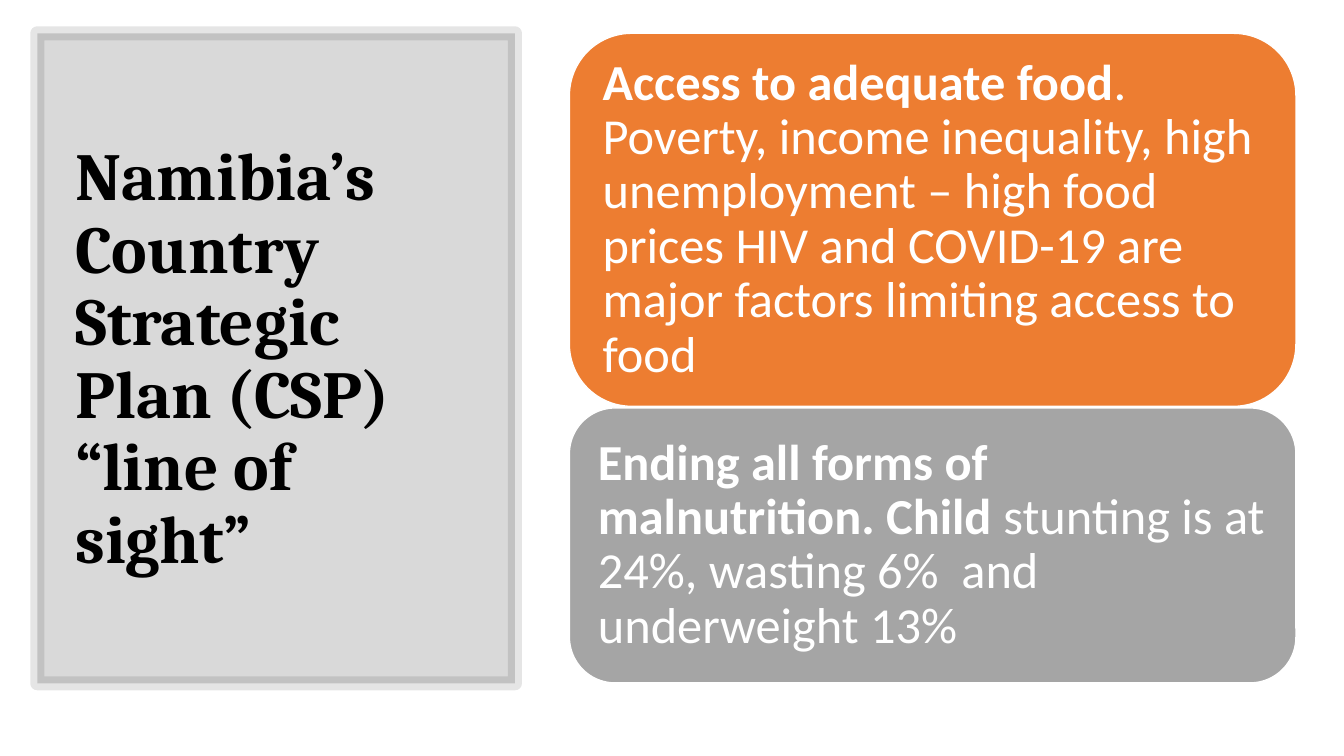
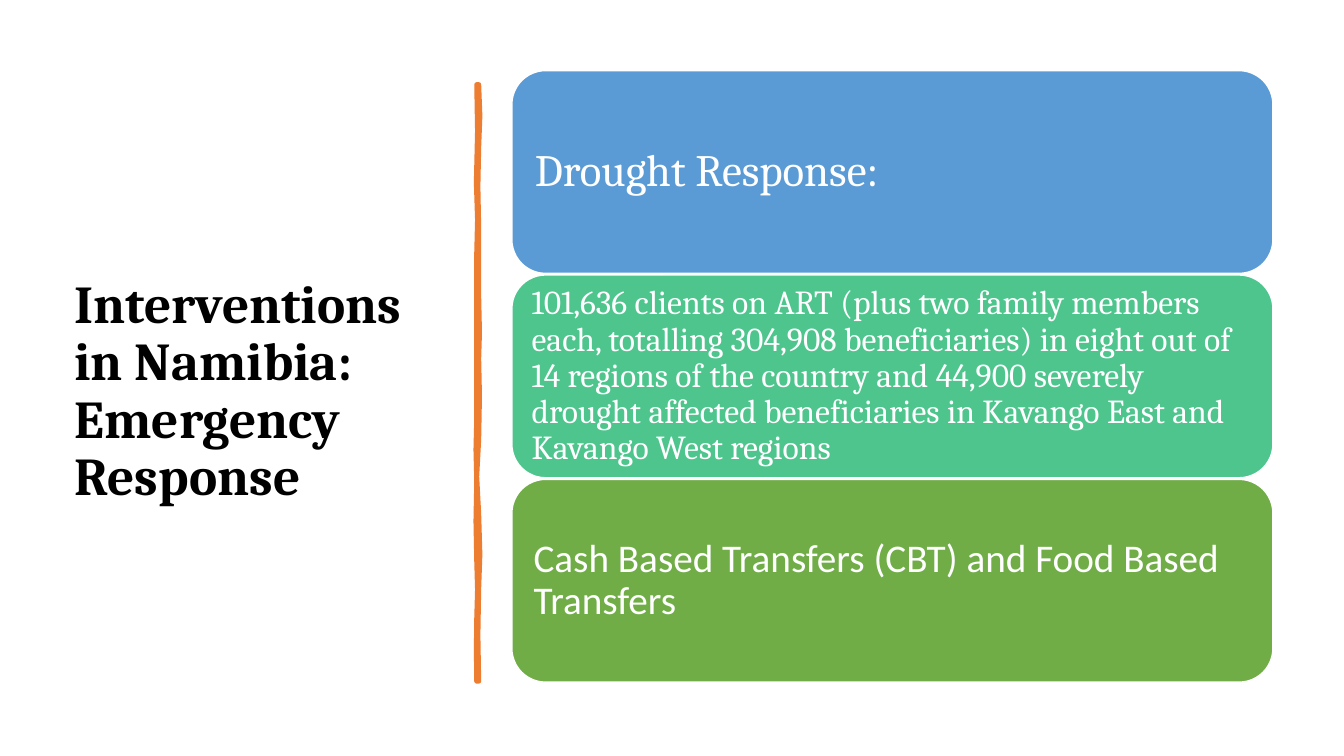
"""Build two slides on Namibia's strategic plan and emergency response."""
from lxml.etree import SubElement
from pptx import Presentation
from pptx.dml.color import RGBColor
from pptx.enum.shapes import MSO_SHAPE
from pptx.enum.text import MSO_ANCHOR, PP_ALIGN
from pptx.oxml.ns import qn
from pptx.util import Cm, Pt

BLACK, WHITE = "000000", "FFFFFF"
ORANGE, GREY, BLUE, TEAL, GREEN = "ED7D31", "A5A5A5", "5B9BD5", "4DC58D", "70AD47"
HEADING_FONT, BODY_FONT = "Cambria", "Calibri"
LINE_SPACING = 0.9
CARD_GAP = 0.04

DIVIDER_RIGHT = [
    (12.07, 2.13), (12.1, 2.92), (12.07, 3.71), (12.05, 4.7), (12.07, 5.74),
    (12.07, 7.47), (12.09, 8.38), (12.07, 9.04), (12.09, 9.98), (12.07, 11.07),
    (12.02, 12.01), (12.07, 12.95), (12.1, 13.97), (12.07, 14.83),
    (12.05, 16), (12.07, 17.17),
]
DIVIDER_LEFT = [
    (12.01, 17.17), (12, 16.38), (12.01, 15.57), (12.03, 14.86), (12.01, 14.15),
    (11.99, 13.13), (12.01, 12.12), (11.99, 11.33), (12.01, 10.54),
    (12.01, 8.51), (12.01, 6.35), (12.03, 5.54), (12, 4.6), (12.03, 3.3),
    (12.01, 2.13),
]


def color(hex_code):
    """Turn a hex string into a colour."""
    return RGBColor.from_string(hex_code)


def paint(shape, fill, line, line_width):
    """Give a shape its fill and outline, without a shadow."""
    shape.shadow.inherit = False
    shape.fill.solid()
    shape.fill.fore_color.rgb = color(fill)
    shape.line.color.rgb = color(line)
    shape.line.width = Pt(line_width)


def set_opacity(solid_fill, percent):
    """Make a solid fill partly transparent."""
    alpha = SubElement(solid_fill.find(qn("a:srgbClr")), qn("a:alpha"))
    alpha.set("val", str(percent * 1000))


def write(frame, runs, font, size, ink, bold=False):
    """Write one left-aligned paragraph from (text, emphasised) runs."""
    frame.word_wrap = True
    frame.vertical_anchor = MSO_ANCHOR.MIDDLE
    paragraph = frame.paragraphs[0]
    paragraph.alignment = PP_ALIGN.LEFT
    paragraph.line_spacing = LINE_SPACING
    paragraph.font.name = font
    paragraph.font.size = Pt(size)
    paragraph.font.bold = bold
    paragraph.font.color.rgb = color(ink)
    for text, emphasised in runs:
        run = paragraph.add_run()
        run.text = text
        if emphasised:
            run.font.bold = True


def add_title(slide, text, left, top, width, height, size):
    """Add the bold title at the left of a slide."""
    title = slide.shapes.add_textbox(Cm(left), Cm(top), Cm(width), Cm(height))
    write(title.text_frame, [(text, False)], HEADING_FONT, size, BLACK, bold=True)


def add_title_panel(slide, left, top, width, height):
    """Add the translucent panel behind a title."""
    panel = slide.shapes.add_shape(
        MSO_SHAPE.RECTANGLE, Cm(left), Cm(top), Cm(width), Cm(height))
    paint(panel, BLACK, BLACK, 10)
    properties = panel.element.spPr
    set_opacity(properties.find(qn("a:solidFill")), 15)
    set_opacity(properties.find(qn("a:ln")).find(qn("a:solidFill")), 10)


def add_divider(slide):
    """Add the hand-drawn vertical divider."""
    start, *rest = [(Cm(x), Cm(y)) for x, y in DIVIDER_RIGHT + DIVIDER_LEFT]
    outline = slide.shapes.build_freeform(*start)
    outline.add_line_segments(rest, close=True)
    divider = outline.convert_to_shape()
    paint(divider, ORANGE, ORANGE, 3.25)
    SubElement(divider.element.spPr.find(qn("a:ln")), qn("a:round"))


def add_cards(slide, left, top, width, cards):
    """Stack rounded cards of (height, fill, font, size, margin, runs)."""
    for height, fill, font, size, margin, runs in cards:
        card = slide.shapes.add_shape(
            MSO_SHAPE.ROUNDED_RECTANGLE, Cm(left), Cm(top), Cm(width), Cm(height))
        paint(card, fill, WHITE, 1)
        frame = card.text_frame
        frame.margin_left = frame.margin_right = Cm(margin)
        frame.margin_top = frame.margin_bottom = Cm(margin)
        write(frame, runs, font, size, WHITE)
        top += height + CARD_GAP


def build_strategy(slide):
    """Build the strategic plan slide."""
    add_title_panel(slide, 0.94, 0.84, 12.04, 16.38)
    add_title(slide, "Namibia’s Country Strategic Plan (CSP) “line of sight”",
              1.65, 1.78, 10.57, 14.6, 48)
    access = [
        ("Access to adequate food", True),
        (". Poverty, income inequality, high unemployment – high food prices "
         "HIV and COVID-19 are major factors limiting access to food", False),
    ]
    malnutrition = [
        ("Ending all forms of malnutrition. Child", True),
        (" stunting is at 24%, wasting 6%  and underweight 13%", False),
    ]
    add_cards(slide, 14.35, 0.84, 18.31, [
        (9.4, ORANGE, BODY_FONT, 36, 0.38, access),
        (6.93, GREY, BODY_FONT, 36, 0.38, malnutrition),
    ])


def build_emergency(slide):
    """Build the emergency response slide."""
    add_title(slide, "Interventions in Namibia: Emergency Response",
              1.63, 2.13, 9.5, 15.52, 38)
    add_divider(slide)
    clients = (
        "101,636 clients on ART (plus two family members each, totalling "
        "304,908 beneficiaries) in eight out of 14 regions of the country and "
        "44,900 severely drought affected beneficiaries in Kavango East and "
        "Kavango West regions")
    transfers = "Cash Based Transfers (CBT) and Food Based Transfers"
    add_cards(slide, 12.9, 1.78, 19.18, [
        (5.11, BLUE, HEADING_FONT, 32, 0.33, [("Drought Response:", False)]),
        (5.11, TEAL, HEADING_FONT, 24, 0.25, [(clients, False)]),
        (5.11, GREEN, BODY_FONT, 28, 0.3, [(transfers, False)]),
    ])


def main():
    """Build and save the presentation."""
    deck = Presentation()
    deck.slide_width, deck.slide_height = Cm(33.87), Cm(19.05)
    blank = deck.slide_layouts[6]
    for build in (build_strategy, build_emergency):
        build(deck.slides.add_slide(blank))
    deck.save("out.pptx")


if __name__ == "__main__":
    main()
